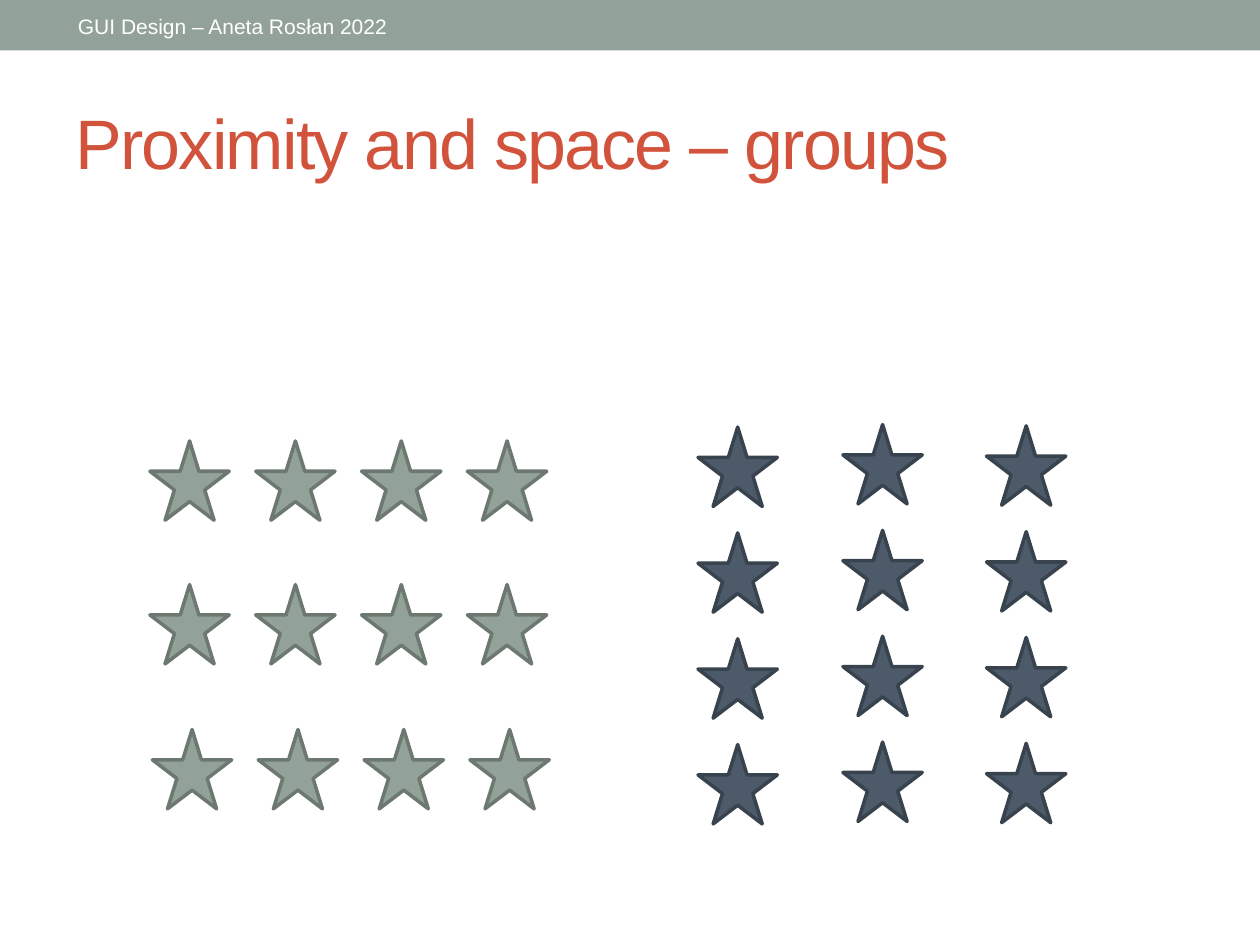
"""Build a slide showing how spacing turns stars into rows and columns."""
from pptx import Presentation
from pptx.dml.color import RGBColor as Rgb
from pptx.enum.shapes import MSO_SHAPE as Kind
from pptx.enum.text import MSO_ANCHOR as Anchor, PP_ALIGN as Align
from pptx.util import Inches, Pt

HEAD = "GUI Design – Aneta Rosłan 2022"
TITLE = "Proximity and space – groups"

THEME = {
    "font": "Arial",
    "sage": "93A299",
    "moss": "6D7871",
    "slate": "4C5A6A",
    "ink": "38434E",
    "red": "D2533C",
    "white": "FFFFFF",
    "head": 12,
    "title": 40,
    "edge": 2,
}

SIZE, NEAR = 0.63, 0.84
COLS = [(5.54, 3.39), (6.69, 3.37), (7.83, 3.38)]
ROWS = [(1.21, 5.79), (1.19, 4.64), (1.19, 3.5)]
GROUPS = [
    {"starts": COLS, "step": (0, NEAR), "fill": "slate", "line": "ink"},
    {"starts": ROWS, "step": (NEAR, 0), "fill": "sage", "line": "moss"},
]


def tint(name):
    return Rgb.from_string(THEME[name])


def add_shape(shapes, kind, box, fill, line=None):
    shape = shapes.add_shape(kind, *map(Inches, box))
    shape.shadow.inherit = False
    shape.fill.solid()
    shape.fill.fore_color.rgb = tint(fill)
    if line:
        shape.line.color.rgb = tint(line)
        shape.line.width = Pt(THEME["edge"])
    else:
        shape.line.fill.background()
    return shape


def set_text(shape, text, size, color):
    frame = shape.text_frame
    frame.word_wrap = True
    frame.vertical_anchor = Anchor.MIDDLE
    para = frame.paragraphs[0]
    para.text = text
    para.alignment = Align.LEFT
    para.font.name = THEME["font"]
    para.font.size = Pt(THEME[size])
    para.font.color.rgb = tint(color)
    return para


def add_stars(slide, starts, step, fill, line):
    group = slide.shapes.add_group_shape()
    for left, top in starts:
        for i in range(4):
            box = (left + i * step[0], top + i * step[1], SIZE, SIZE)
            add_shape(group.shapes, Kind.STAR_5_POINT, box, fill, line)


def main():
    deck = Presentation()
    deck.slide_width, deck.slide_height = Inches(10), Inches(7.5)
    slide = deck.slides.add_slide(deck.slide_layouts[6])

    add_shape(slide.shapes, Kind.RECTANGLE, (0, 0, 10, 0.4), "sage")
    label = add_shape(slide.shapes, Kind.RECTANGLE, (0.52, 0.06, 3.15, 0.3), "sage")
    set_text(label, HEAD, "head", "white")

    title = slide.shapes.add_textbox(*map(Inches, (0.5, 0.58, 9, 1.08)))
    para = set_text(title, TITLE, "title", "red")
    para.runs[0].font._element.set("spc", "-100")

    for group in GROUPS:
        add_stars(slide, **group)
    deck.save("out.pptx")


if __name__ == "__main__":
    main()
